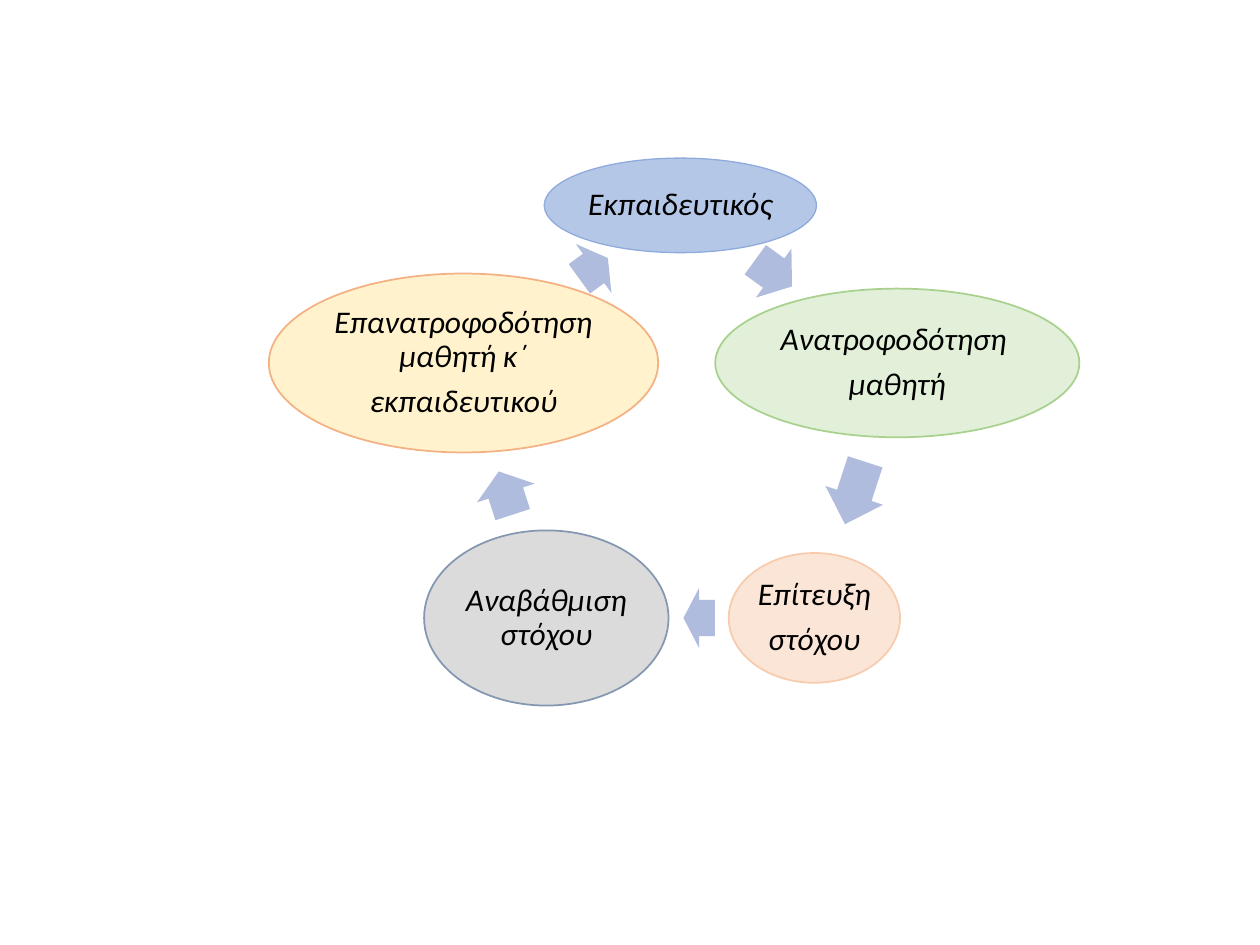
"""Builds a slide with a five-step feedback cycle of ovals and arrows."""
from math import cos, radians, sin

from pptx import Presentation
from pptx.dml.color import RGBColor
from pptx.enum.shapes import MSO_SHAPE
from pptx.enum.text import MSO_ANCHOR, PP_ALIGN
from pptx.util import Inches, Pt

OVAL, ARROW = MSO_SHAPE.OVAL, MSO_SHAPE.RIGHT_ARROW
MIDDLE, CENTER = MSO_ANCHOR.MIDDLE, PP_ALIGN.CENTER
HEX = {
    "ink": "000000", "arrow": "B0BCDE",
    "blue": "B4C7E7", "blue_rim": "8FAADC",
    "green": "E2F0D9", "green_rim": "A9D18E",
    "peach": "FBE5D6", "peach_rim": "F8CBAD",
    "gray": "DBDBDB", "gray_rim": "8497B0",
    "cream": "FFF2CC", "cream_rim": "F4B183",
}
COLOR = {name: RGBColor.from_string(code) for name, code in HEX.items()}

deck = Presentation()
deck.slide_width, deck.slide_height = Inches(10), Inches(7.5)
slide = deck.slides.add_slide(deck.slide_layouts[6])
COL = deck.slide_width / 10
MID_X, MID_Y, RADIUS = 5.4, 3.44, 1.81
TURN = 72


def add_node(kind, x, y, wide, high, fill):
    box = [round(n * COL) for n in (x - wide / 2, y - high / 2, wide, high)]
    node = slide.shapes.add_shape(kind, *box)
    node.shadow.inherit = False
    node.fill.solid()
    node.fill.fore_color.rgb = COLOR[fill]
    node.line.fill.background()
    return node


def add_text(node, lines, size=18, font="Calibri", color="ink", inset=0.03):
    frame = node.text_frame
    frame.word_wrap = True
    frame.vertical_anchor = MIDDLE
    frame.margin_left = frame.margin_right = Inches(inset)
    frame.margin_top = frame.margin_bottom = Inches(inset)
    for i, line in enumerate(lines):
        para = frame.add_paragraph() if i else frame.paragraphs[0]
        para.alignment = CENTER
        para.line_spacing = 0.9
        para.space_after = Pt(size * 0.35)
        run = para.add_run()
        run.text = line
        run.font.name, run.font.size = font, Pt(size)
        run.font.italic = True
        run.font.color.rgb = COLOR[color]


steps = [
    (["Εκπαιδευτικός"], 2.16, 0.75, "blue", 0.75),
    (["Ανατροφοδότηση ", "μαθητή"], 2.89, 1.18, "green", 1),
    (["Επίτευξη", "στόχου"], 1.36, 1.03, "peach", 1),
    (["Αναβάθμιση στόχου"], 1.94, 1.39, "gray", 1),
    (["Επανατροφοδότηση μαθητή κ΄", "εκπαιδευτικού"], 3.09, 1.42, "cream", 1),
]
arrows = [(0.36, 0.43), (0.52, 0.51), (0.25, 0.43), (0.36, 0.49), (0.28, 0.6)]

spots = [
    (MID_X + RADIUS * sin(radians(TURN * i)),
     MID_Y - RADIUS * cos(radians(TURN * i)))
    for i in range(len(steps))
]

for (x, y), (lines, wide, high, hue, rim) in zip(spots, steps):
    oval = add_node(OVAL, x, y, wide, high, hue)
    oval.line.color.rgb = COLOR[hue + "_rim"]
    oval.line.width = Pt(rim)
    add_text(oval, lines)

for i, (long, share) in enumerate(arrows):
    (x1, y1), (x2, y2) = spots[i], spots[(i + 1) % len(spots)]
    x, y = x1 + (x2 - x1) * share, y1 + (y2 - y1) * share
    arrow = add_node(ARROW, x, y, long, 0.48, "arrow")
    arrow.rotation = TURN / 2 + TURN * i
    arrow.adjustments[0], arrow.adjustments[1] = 0.6, 0.5

deck.save("out.pptx")
